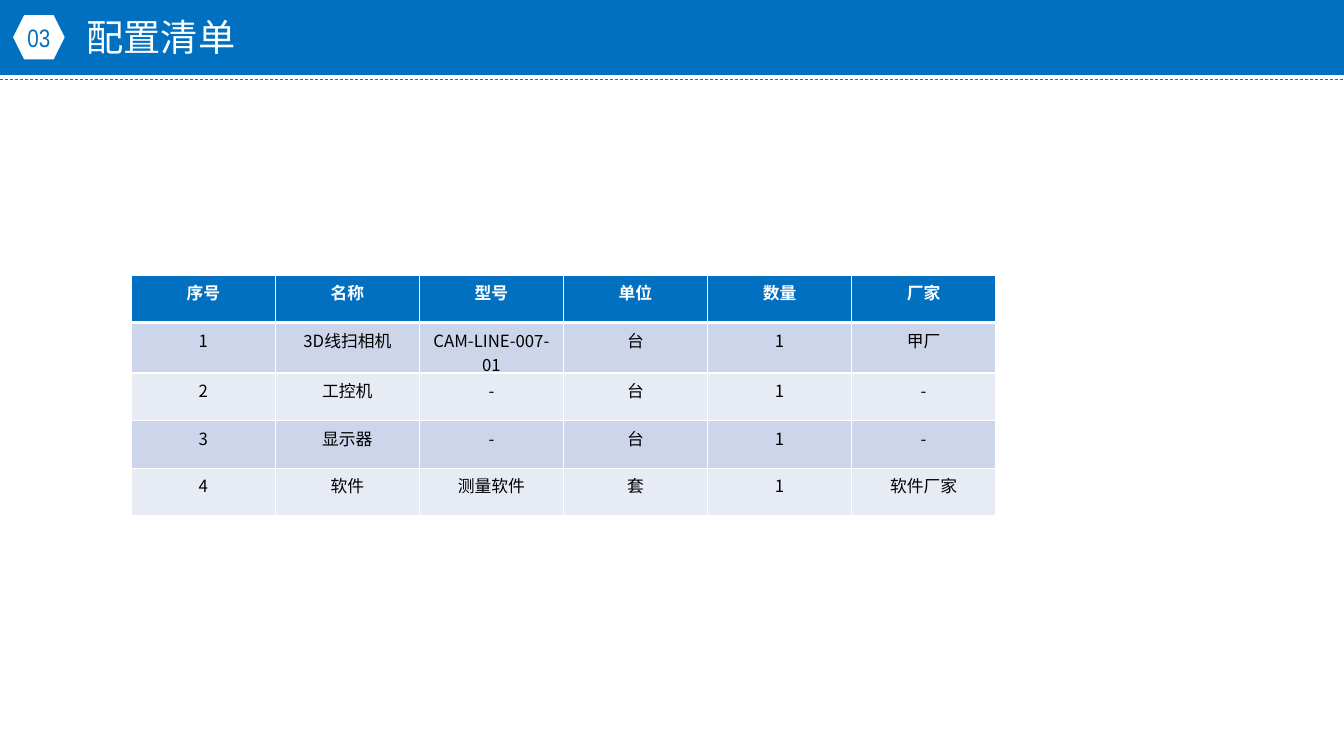
from pptx import Presentation
from pptx import util as u
from pptx.dml.color import RGBColor
from pptx.enum import dml, shapes, text
from pptx.oxml import ns
from lxml import etree

SANS = "Noto Sans CJK SC"
BLUE, WHITE, BLACK = "0170C1", "FFFFFF", "000000"
BANDS = ("CCD5E9", "E7EBF4")
ROWS = [
    ("序号", "名称", "型号", "单位", "数量", "厂家"),
    ("1", "3D线扫相机", "CAM-LINE-007-01", "台", "1", "甲厂"),
    ("2", "工控机", "-", "台", "1", "-"),
    ("3", "显示器", "-", "台", "1", "-"),
    ("4", "软件", "测量软件", "套", "1", "软件厂家"),
]


def paint(fmt, color):
    """Give a fill or a line format a solid colour."""
    fill = fmt.fill if hasattr(fmt, "fill") else fmt
    fill.solid()
    fill.fore_color.rgb = RGBColor.from_string(color)


def write(frame, words, size=12, color=BLACK, font=SANS, bold=False, center=True):
    par = frame.paragraphs[0]
    par.alignment = text.PP_ALIGN.CENTER if center else text.PP_ALIGN.LEFT
    run = par.add_run()
    run.text = words
    run.font.size = u.Pt(size)
    run.font.bold = bold
    run.font.name = font
    paint(run.font.fill, color)
    east = etree.SubElement(run.font._element, ns.qn("a:ea"))
    east.set("typeface", font)


def add_block(slide, kind, left, top, width, height, color):
    block = slide.shapes.add_shape(
        kind, u.Cm(left), u.Cm(top), u.Cm(width), u.Cm(height))
    block.shadow.inherit = False
    paint(block.fill, color)
    block.line.fill.background()
    return block


def add_rule(slide, top, width):
    rule = slide.shapes.add_connector(
        shapes.MSO_CONNECTOR.STRAIGHT, 0, u.Cm(top), width, u.Cm(top))
    paint(rule.line, BLUE)
    rule.line.width = u.Pt(0.5)
    rule.line.dash_style = dml.MSO_LINE.DASH
    etree.SubElement(rule._element.spPr, ns.qn("a:effectLst"))


def add_badge(slide, label):
    badge = add_block(slide, shapes.MSO_SHAPE.HEXAGON, 0.33, 0.38, 1.3, 1.12, WHITE)
    frame = badge.text_frame
    frame.margin_left = frame.margin_right = 0
    frame.margin_top = frame.margin_bottom = 0
    frame.vertical_anchor = text.MSO_ANCHOR.MIDDLE
    write(frame, label, size=18, color=BLUE, font="Arial Narrow")


def add_title(slide, words):
    box = slide.shapes.add_textbox(u.Cm(1.93), u.Cm(0.23), u.Cm(4.27), u.Cm(1.4))
    box.text_frame.word_wrap = False
    box.text_frame.auto_size = text.MSO_AUTO_SIZE.SHAPE_TO_FIT_TEXT
    write(box.text_frame, words, size=26.6, color=WHITE, center=False)


def edge(cell, foot):
    """Draw white borders; foot is the width of the bottom one in points."""
    props = cell._tc.get_or_add_tcPr()
    sides = {"lnL": 1, "lnR": 1, "lnT": 1, "lnB": foot}
    for spot, (side, width) in enumerate(sides.items()):
        line = etree.Element(ns.qn("a:" + side), w=str(u.Pt(width)))
        fill = etree.SubElement(line, ns.qn("a:solidFill"))
        etree.SubElement(fill, ns.qn("a:srgbClr"), val=WHITE)
        props.insert(spot, line)


def add_list(slide, rows):
    wide, high = 3.63, 1.2
    count = len(rows[0])
    table = slide.shapes.add_table(
        len(rows), count, u.Cm(3.31), u.Cm(6.93),
        u.Cm(wide * count), u.Cm(high * len(rows))).table
    table.horz_banding = False
    for col in table.columns:
        col.width = u.Cm(wide)
    for i, row in enumerate(rows):
        head = i == 0
        table.rows[i].height = u.Cm(high)
        for j, words in enumerate(row):
            cell = table.cell(i, j)
            paint(cell.fill, BLUE if head else BANDS[(i - 1) % 2])
            edge(cell, 3 if head else 1)
            write(cell.text_frame, words, color=WHITE if head else BLACK, bold=head)


def main():
    deck = Presentation()
    deck.slide_width, deck.slide_height = u.Cm(33.87), u.Cm(19.05)
    slide = deck.slides.add_slide(deck.slide_layouts[6])
    # Header band
    add_block(slide, shapes.MSO_SHAPE.RECTANGLE, 0, 0, 33.87, 1.89, BLUE)
    add_rule(slide, 2, deck.slide_width)
    add_badge(slide, "03")
    add_title(slide, "配置清单")
    # Parts list
    add_list(slide, ROWS)
    deck.save("out.pptx")


if __name__ == "__main__":
    main()
